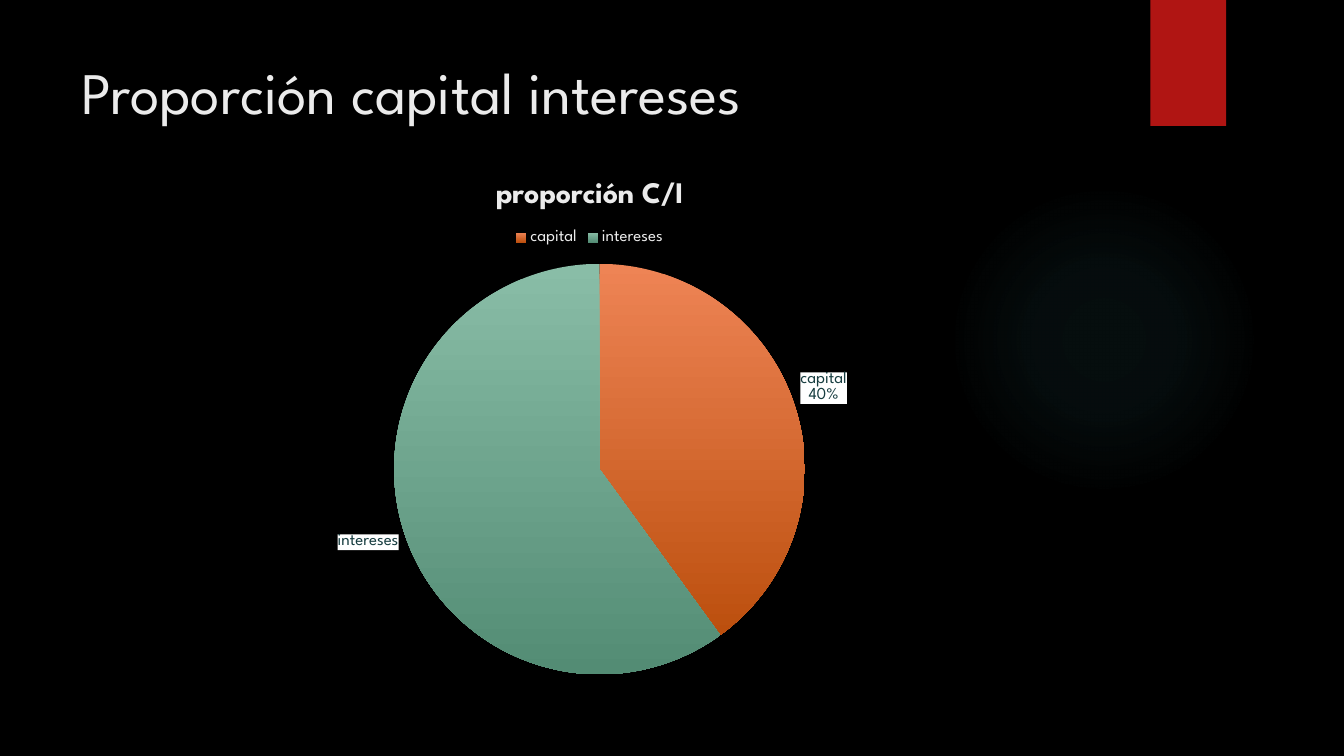
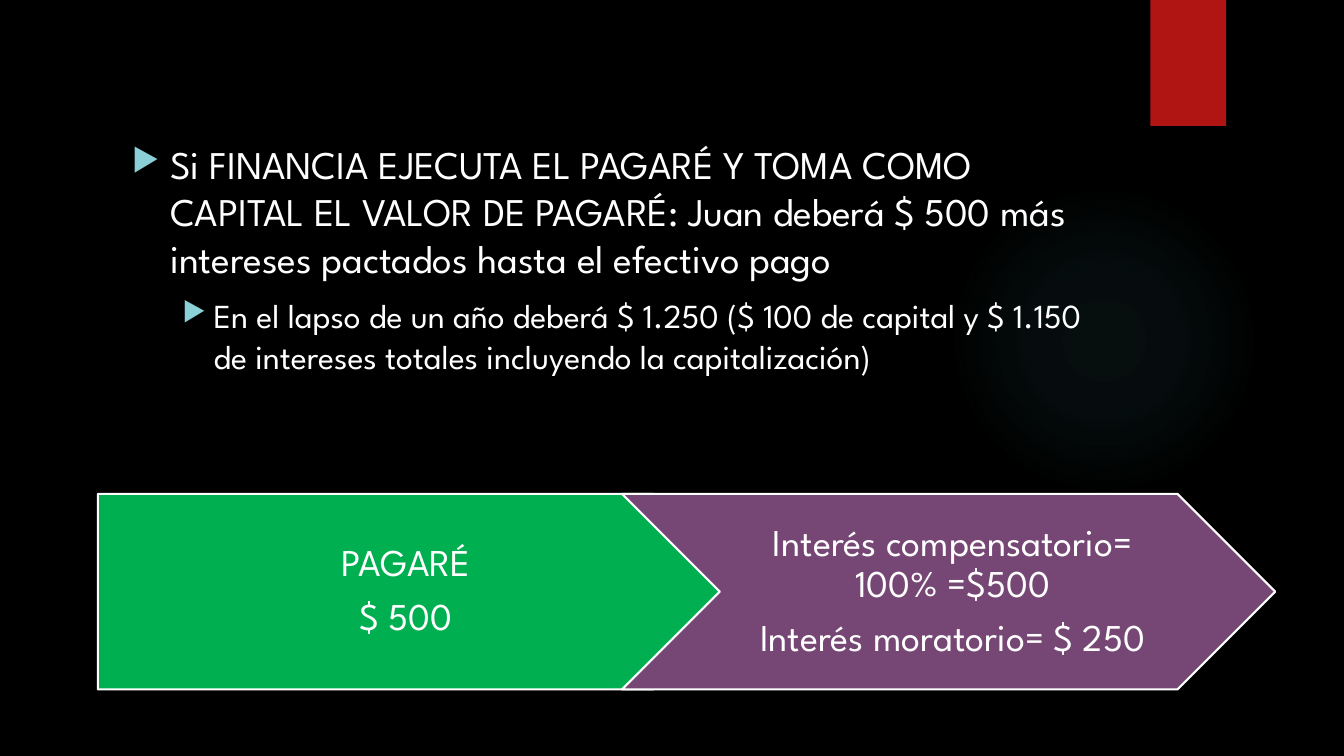
"""Build two dark slides on the capital and interest shares of a promissory note."""
from lxml import etree
from pptx import Presentation
from pptx.chart.data import CategoryChartData
from pptx.dml.color import RGBColor
from pptx.enum.chart import XL_CHART_TYPE as ChartType
from pptx.enum.chart import XL_LABEL_POSITION as LabelPosition
from pptx.enum.chart import XL_LEGEND_POSITION as LegendPosition
from pptx.enum.shapes import MSO_SHAPE as Preset
from pptx.enum.text import MSO_ANCHOR as Anchor
from pptx.enum.text import PP_ALIGN as Align
from pptx.oxml import parse_xml
from pptx.oxml.ns import nsdecls, qn
from pptx.util import Inches, Pt

BLACK = RGBColor(0x00, 0x00, 0x00)
WHITE = RGBColor(0xFF, 0xFF, 0xFF)
PALE = RGBColor(0xEB, 0xEB, 0xEB)
RED = RGBColor(0xB0, 0x15, 0x13)
AQUA = RGBColor(0x50, 0xB9, 0xC1)
BULLET = RGBColor(0x8A, 0xD0, 0xD6)
DARK_TEAL = RGBColor(0x17, 0x3D, 0x40)
GREEN = RGBColor(0x00, 0xB0, 0x50)
PURPLE = RGBColor(0x76, 0x46, 0x74)
ORANGES = RGBColor(0xEE, 0x84, 0x55), RGBColor(0xBC, 0x4F, 0x0E)
SAGES = RGBColor(0x89, 0xBD, 0xA7), RGBColor(0x53, 0x8C, 0x74)
FACE = "League Spartan"

deck = Presentation()
deck.slide_width, deck.slide_height = Inches(13.33), Inches(7.5)
COL, ROW = deck.slide_width / 100, deck.slide_height / 100


def grid(left, top, width, height):
    return int(left * COL), int(top * ROW), int(width * COL), int(height * ROW)


def style(font, size, colour, bold=False):
    for key, value in {"name": FACE, "size": Pt(size), "bold": bold}.items():
        setattr(font, key, value)
    font.color.rgb = colour


glow_stops = "".join(
    f'<a:gs pos="{share * 1000}"><a:srgbClr val="{AQUA}">'
    f'<a:alpha val="{alpha * 1000}"/></a:srgbClr></a:gs>'
    for share, alpha in ((0, 7), (36, 6), (69, 0), (100, 0))
)
glow_xml = (
    f'<a:gradFill {nsdecls("a")}><a:gsLst>{glow_stops}</a:gsLst><a:path path="circle">'
    '<a:fillToRect l="50000" t="50000" r="50000" b="50000"/></a:path></a:gradFill>'
)

slides = [deck.slides.add_slide(deck.slide_layouts[6]) for _ in range(2)]
for slide in slides:
    slide.background.fill.solid()
    slide.background.fill.fore_color.rgb = BLACK
    glow = slide.shapes.add_shape(Preset.OVAL, *grid(70.59, 24.4, 23.1, 41.07))
    ribbon = slide.shapes.add_shape(Preset.RECTANGLE, *grid(85.6, 0, 5.63, 16.67))
    for decoration in (glow, ribbon):
        decoration.shadow.inherit = False
        decoration.line.fill.background()
        decoration.fill.solid()
        decoration.fill.fore_color.rgb = RED
    solid = glow.element.spPr.find(qn("a:solidFill"))
    glow.element.spPr.replace(solid, parse_xml(glow_xml))

proportion_slide, note_slide = slides

heading = proportion_slide.shapes.add_textbox(*grid(5.33, 6.67, 77.2, 13)).text_frame
heading.word_wrap = True
heading.text = "Proporción capital intereses"
style(heading.paragraphs[0].font, 42, PALE)

shares = CategoryChartData()
shares.categories = ["capital", "intereses"]
shares.add_series("proporción C/I", (40, 60))
pie = proportion_slide.shapes.add_chart(
    ChartType.PIE, *grid(7.2, 20.8, 73.35, 70.53), shares
).chart
style(pie.font, 10, WHITE)
pie.has_title = True
pie.chart_title.text_frame.text = "proporción C/I"
style(pie.chart_title.text_frame.paragraphs[0].font, 21.3, PALE, bold=True)
pie.has_legend = True
pie.legend.position = LegendPosition.TOP
pie.legend.include_in_layout = False
style(pie.legend.font, 12, PALE)

plot_area = pie.plots[0]._element.getparent()
for old_layout in plot_area.findall(qn("c:layout")):
    plot_area.remove(old_layout)
layout_values = {
    "layoutTarget": "inner", "xMode": "edge", "yMode": "edge",
    "x": 0.3, "y": 0.2, "w": 0.42, "h": 0.77,
}
layout = etree.Element(qn("c:layout"))
manual = etree.SubElement(layout, qn("c:manualLayout"))
for tag, value in layout_values.items():
    etree.SubElement(manual, qn(f"c:{tag}"), val=str(value))
plot_area.insert(0, layout)

pie.plots[0].vary_by_categories = True
series = pie.plots[0].series[0]
for index, colours in enumerate((ORANGES, SAGES)):
    fill = series.points[index].format.fill
    fill.gradient()
    fill.gradient_angle = 270
    for stop, colour in zip(fill.gradient_stops, colours):
        stop.color.rgb = colour

labels = series.data_labels
label_format = {
    "show_percentage": True, "show_category_name": True, "show_value": False,
    "number_format": "0%", "number_format_is_linked": False,
    "position": LabelPosition.OUTSIDE_END,
}
for key, value in label_format.items():
    setattr(labels, key, value)
style(labels.font, 12, DARK_TEAL)
interest_label = series.points[1].data_label
interest_label.text_frame.text = "intereses"
style(interest_label.text_frame.paragraphs[0].runs[0].font, 12, DARK_TEAL)
interest_label.position = LabelPosition.OUTSIDE_END

all_labels = labels._element
separator = etree.Element(qn("c:separator"))
separator.text = "\n"
all_labels.xpath("c:showBubbleSize|c:showPercent")[-1].addnext(separator)
for label in (all_labels, all_labels.find(qn("c:dLbl"))):
    for old_box in label.findall(qn("c:spPr")):
        label.remove(old_box)
    label.xpath("c:txPr|c:dLblPos")[0].addprevious(parse_xml(
        f'<c:spPr {nsdecls("c", "a")}><a:solidFill><a:srgbClr val="{WHITE}"/>'
        '</a:solidFill></c:spPr>'
    ))

points = (
    ("Si FINANCIA EJECUTA EL PAGARÉ Y TOMA COMO CAPITAL EL VALOR DE PAGARÉ: "
     "Juan deberá $ 500 más intereses pactados hasta el efectivo pago", 28, 0.38, 0.38),
    ("En el lapso de un año deberá $ 1.250 ($ 100 de capital y $ 1.150 "
     "de intereses totales incluyendo la capitalización)", 24, 0.81, 0.31),
)
body = note_slide.shapes.add_textbox(*grid(9.08, 17.87, 73.35, 40)).text_frame
body.word_wrap = True
for level, (text, size, indent, hanging) in enumerate(points):
    paragraph = body.add_paragraph() if level else body.paragraphs[0]
    paragraph.text = text
    paragraph.level = level
    properties = paragraph._p.get_or_add_pPr()
    properties.set("marL", str(Inches(indent)))
    properties.set("indent", str(-Inches(hanging)))
    bullet_colour = etree.SubElement(properties, qn("a:buClr"))
    etree.SubElement(bullet_colour, qn("a:srgbClr"), val=str(BULLET))
    etree.SubElement(properties, qn("a:buSzPct"), val="80000")
    etree.SubElement(properties, qn("a:buChar"), char="▶")
    if level:
        paragraph.space_before = Pt(10)
    style(paragraph.font, size, WHITE)

steps = (
    (Preset.PENTAGON, GREEN, 0.16, ("PAGARÉ", "$ 500")),
    (Preset.CHEVRON, PURPLE, 0.12,
     ("Interés compensatorio= 100% =$500", "Interés moratorio= $ 250")),
)
for index, (preset, colour, inset, lines) in enumerate(steps):
    arrow = note_slide.shapes.add_shape(preset, *grid(7.28 + 39 * index, 65.33, 48.6, 25.87))
    arrow.shadow.inherit = False
    arrow.fill.solid()
    arrow.fill.fore_color.rgb = colour
    arrow.line.color.rgb = WHITE
    arrow.line.width = Pt(1.5)
    frame_format = {
        "word_wrap": True, "vertical_anchor": Anchor.MIDDLE,
        "margin_left": Inches(inset), "margin_right": Inches(0.04),
        "margin_top": Inches(0.08), "margin_bottom": Inches(0.08),
        "text": "\n".join(lines),
    }
    for key, value in frame_format.items():
        setattr(arrow.text_frame, key, value)
    for paragraph in arrow.text_frame.paragraphs:
        paragraph.alignment = Align.CENTER
        paragraph.line_spacing = 0.9
        paragraph.space_after = Pt(9.45)
        style(paragraph.font, 27, WHITE)

deck.save("out.pptx")
